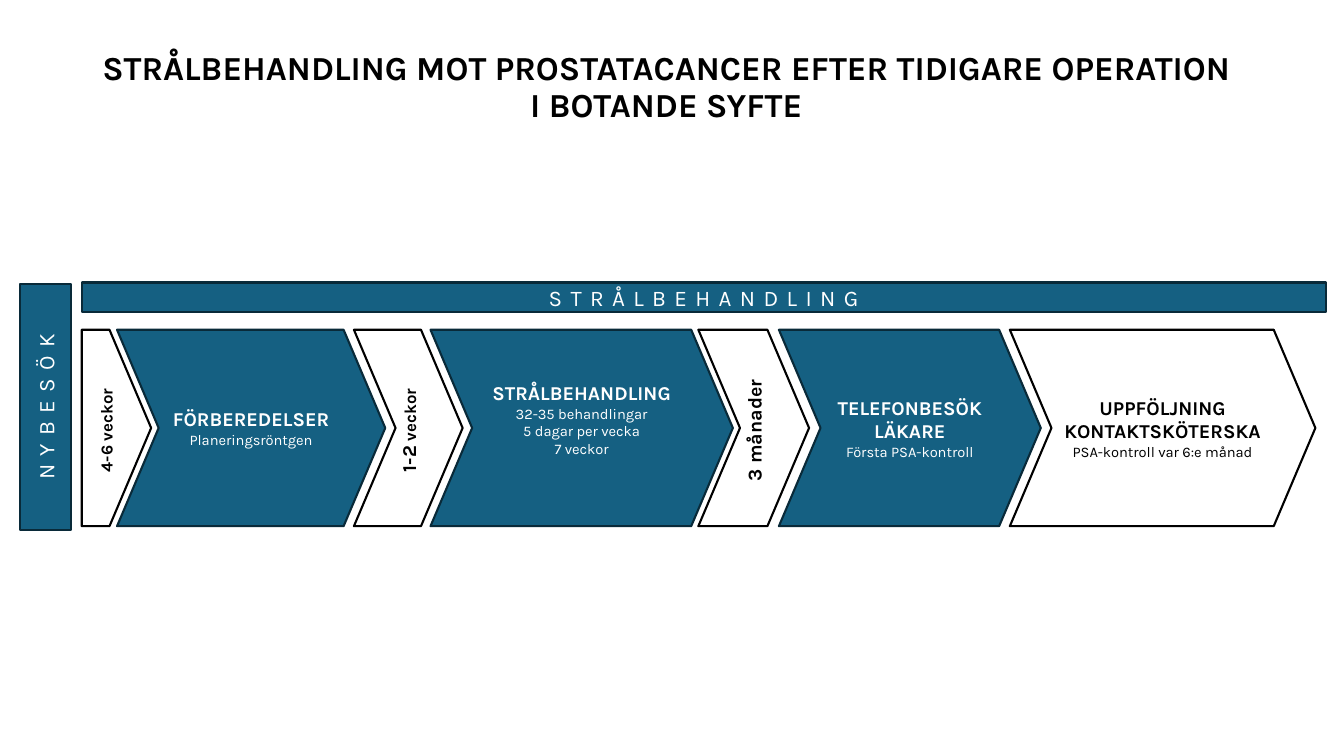
from dataclasses import dataclass

import pptx
import pptx.dml.color
import pptx.enum.shapes
import pptx.enum.text
import pptx.util

Cm = pptx.util.Cm
Pt = pptx.util.Pt
RGBColor = pptx.dml.color.RGBColor
ShapeType = pptx.enum.shapes.MSO_SHAPE


@dataclass(frozen=True)
class Theme:
    font: str = "Karla"
    black: RGBColor = RGBColor(0x00, 0x00, 0x00)
    white: RGBColor = RGBColor(0xFF, 0xFF, 0xFF)
    blue: RGBColor = RGBColor(0x15, 0x60, 0x82)
    navy: RGBColor = RGBColor(0x09, 0x2A, 0x39)
    title_size: float = 24
    banner_size: float = 16
    heading_size: float = 14
    wait_size: float = 12
    detail_size: float = 10.5
    banner_spacing: float = 6
    outline: float = 1.5


THEME = Theme()


@dataclass(frozen=True)
class Box:
    left: float
    top: float
    width: float
    height: float


@dataclass(frozen=True)
class Words:
    text: str
    size: float
    bold: bool = False


@dataclass(frozen=True)
class Step:
    left: float
    width: float
    paragraphs: list[list[Words]]
    filled: bool = False
    vertical: bool = False
    kind: ShapeType = ShapeType.CHEVRON
    bottom_inset: float = 0.13


# Row of steps, in centimetres
ROW_TOP, ROW_HEIGHT, TIP_DEPTH = 8.31, 4.95, 1.05


def stage(heading: str, *details: str) -> list[list[Words]]:
    """A bold heading with smaller detail lines below it."""
    return [[Words(heading, THEME.heading_size, True)]] + [
        [Words(detail, THEME.detail_size)] for detail in details
    ]


STEPS = [
    Step(2.06, 1.75, [[Words("4-6 veckor", THEME.wait_size, True)]],
         vertical=True, kind=ShapeType.PENTAGON),
    Step(2.95, 6.76, stage("FÖRBEREDELSER", "Planeringsröntgen"), filled=True),
    Step(8.92, 2.74, [[Words("1-2 ", THEME.heading_size, True),
                       Words("veckor", THEME.wait_size, True)]], vertical=True),
    Step(10.85, 7.62, stage("STRÅLBEHANDLING", "32-35 behandlingar",
                            "5 dagar per vecka", "7 veckor"),
         filled=True, bottom_inset=0.57),
    Step(17.6, 2.79, [[Words("3 månader", THEME.heading_size, True)]], vertical=True),
    Step(19.63, 6.6, stage("TELEFONBESÖK LÄKARE", "Första PSA-kontroll"), filled=True),
    Step(25.45, 7.7, stage("UPPFÖLJNING KONTAKTSKÖTERSKA", "PSA-kontroll var 6:e månad")),
]


def write_text(shape, paragraphs: list[list[Words]], *, color: RGBColor,
               spacing: float = 0, line_spacing: float = 1.0,
               vertical: bool = False, bottom_inset: float = 0.13) -> None:
    """Fill a shape with centred text."""
    frame = shape.text_frame
    frame.word_wrap = True
    frame.vertical_anchor = pptx.enum.text.MSO_ANCHOR.MIDDLE
    frame.margin_bottom = Cm(bottom_inset)
    if vertical:
        frame._txBody.bodyPr.set("vert", "vert270")
    for index, line in enumerate(paragraphs):
        paragraph = frame.add_paragraph() if index else frame.paragraphs[0]
        paragraph.alignment = pptx.enum.text.PP_ALIGN.CENTER
        paragraph.line_spacing = line_spacing
        for words in line:
            run = paragraph.add_run()
            run.text = words.text
            run.font.name = THEME.font
            run.font.size = Pt(words.size)
            run.font.bold = words.bold
            run.font.color.rgb = color
            if spacing:
                run._r.get_or_add_rPr().set("spc", str(round(spacing * 100)))


def add_block(slide, kind: ShapeType, box: Box, filled: bool):
    """Add an outlined shape, blue when filled and white otherwise."""
    shape = slide.shapes.add_shape(
        kind, Cm(box.left), Cm(box.top), Cm(box.width), Cm(box.height))
    shape.shadow.inherit = False
    shape.fill.solid()
    shape.fill.fore_color.rgb = THEME.blue if filled else THEME.white
    shape.line.color.rgb = THEME.navy if filled else THEME.black
    shape.line.width = Pt(THEME.outline)
    return shape


def add_title(slide, text: str, box: Box) -> None:
    title = slide.shapes.add_textbox(
        Cm(box.left), Cm(box.top), Cm(box.width), Cm(box.height))
    write_text(title, [[Words(text, THEME.title_size, True)]],
               color=THEME.black, line_spacing=0.9)


def add_banner(slide, text: str, box: Box, rotation: float = 0) -> None:
    banner = add_block(slide, ShapeType.RECTANGLE, box, filled=True)
    banner.rotation = rotation
    write_text(banner, [[Words(text, THEME.banner_size)]],
               color=THEME.white, spacing=THEME.banner_spacing)


def add_step(slide, step: Step) -> None:
    box = Box(step.left, ROW_TOP, step.width, ROW_HEIGHT)
    shape = add_block(slide, step.kind, box, step.filled)
    shape.adjustments[0] = TIP_DEPTH / min(step.width, ROW_HEIGHT)
    write_text(shape, step.paragraphs,
               color=THEME.white if step.filled else THEME.black,
               vertical=step.vertical, bottom_inset=step.bottom_inset)


def main() -> None:
    presentation = pptx.Presentation()
    presentation.slide_width = Cm(33.87)
    presentation.slide_height = Cm(19.05)
    slide = presentation.slides.add_slide(presentation.slide_layouts[6])

    # Title
    add_title(slide, "STRÅLBEHANDLING MOT PROSTATACANCER EFTER TIDIGARE "
                     "OPERATION I BOTANDE SYFTE", Box(2.31, 1.32, 28.96, 1.8))

    # Banners beside and above the steps
    add_banner(slide, "NYBESÖK", Box(-1.95, 9.6, 6.2, 1.3), rotation=270)
    add_banner(slide, "STRÅLBEHANDLING", Box(2.06, 7.12, 31.35, 0.74))

    # Steps and the waiting times between them
    for step in STEPS:
        add_step(slide, step)

    presentation.save("out.pptx")


if __name__ == "__main__":
    main()
